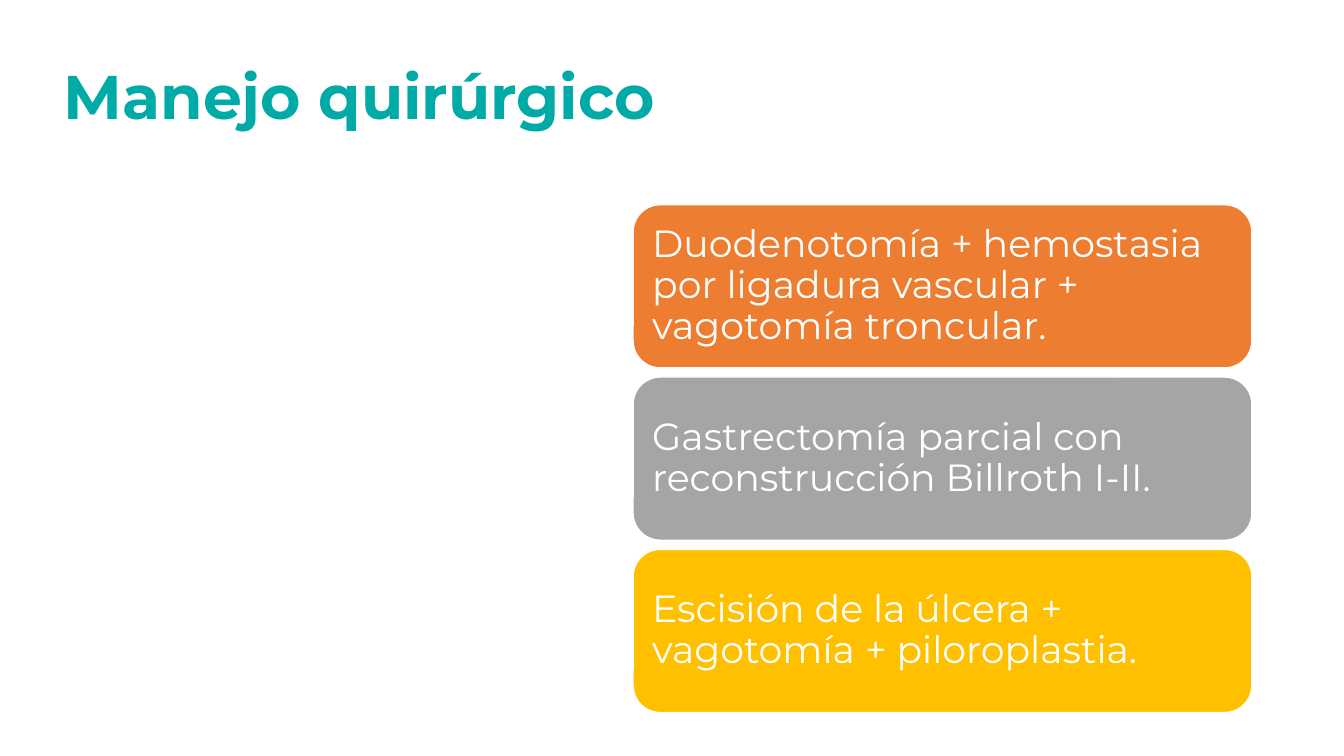
import pptx
import pptx.util
import pptx.dml.color
import pptx.enum.shapes
import pptx.enum.text
from dataclasses import dataclass

Pt = pptx.util.Pt
RGB = pptx.dml.color.RGBColor.from_string


@dataclass(frozen=True)
class Theme:
    font: str = "Montserrat"
    teal: str = "00AAA7"
    orange: str = "ED7D31"
    gray: str = "A5A5A5"
    yellow: str = "FFC000"
    white: str = "FFFFFF"
    title_size: int = 44
    card_size: int = 27


THEME = Theme()
CARD_LEFT, CARD_TOP = 452.2, 146.2
CARD_WIDTH, CARD_HEIGHT, CARD_PITCH = 442, 116.6, 123.1


def write(tf, text, size, color, bold=False, inset=7.2):
    """Fill a frame with one left-aligned, vertically centred paragraph."""
    frame_format = {
        "word_wrap": True,
        "vertical_anchor": pptx.enum.text.MSO_ANCHOR.MIDDLE,
        "margin_left": Pt(inset),
        "margin_right": Pt(inset),
    }
    for name, value in frame_format.items():
        setattr(tf, name, value)
    p = tf.paragraphs[0]
    p.alignment = pptx.enum.text.PP_ALIGN.LEFT
    p.line_spacing = 0.9
    r = p.add_run()
    r.text = text
    for name, value in {"name": THEME.font, "size": Pt(size), "bold": bold}.items():
        setattr(r.font, name, value)
    r.font.color.rgb = RGB(color)


def add_title(s, text):
    sp = s.shapes.add_textbox(Pt(38.2), Pt(18.7), Pt(828), Pt(104.4))
    write(sp.text_frame, text, THEME.title_size, THEME.teal, bold=True)


def add_card(s, top, text, color):
    sp = s.shapes.add_shape(
        pptx.enum.shapes.MSO_SHAPE.ROUNDED_RECTANGLE,
        Pt(CARD_LEFT), Pt(top), Pt(CARD_WIDTH), Pt(CARD_HEIGHT))
    sp.shadow.inherit = False
    sp.fill.solid()
    sp.fill.fore_color.rgb = RGB(color)
    sp.line.color.rgb = RGB(THEME.white)
    sp.line.width = Pt(1)
    write(sp.text_frame, text, THEME.card_size, THEME.white, inset=8)


def main():
    prs = pptx.Presentation()
    prs.slide_width, prs.slide_height = Pt(960), Pt(540)
    s = prs.slides.add_slide(prs.slide_layouts[6])
    add_title(s, "Manejo quirúrgico")
    procedures = [
        ("Duodenotomía + hemostasia por ligadura vascular + vagotomía troncular.",
         THEME.orange),
        ("Gastrectomía parcial con reconstrucción Billroth I-II.", THEME.gray),
        ("Escisión de la úlcera + vagotomía + piloroplastia.", THEME.yellow),
    ]
    for i, (text, color) in enumerate(procedures):
        add_card(s, CARD_TOP + i * CARD_PITCH, text, color)
    prs.save("out.pptx")


if __name__ == "__main__":
    main()
